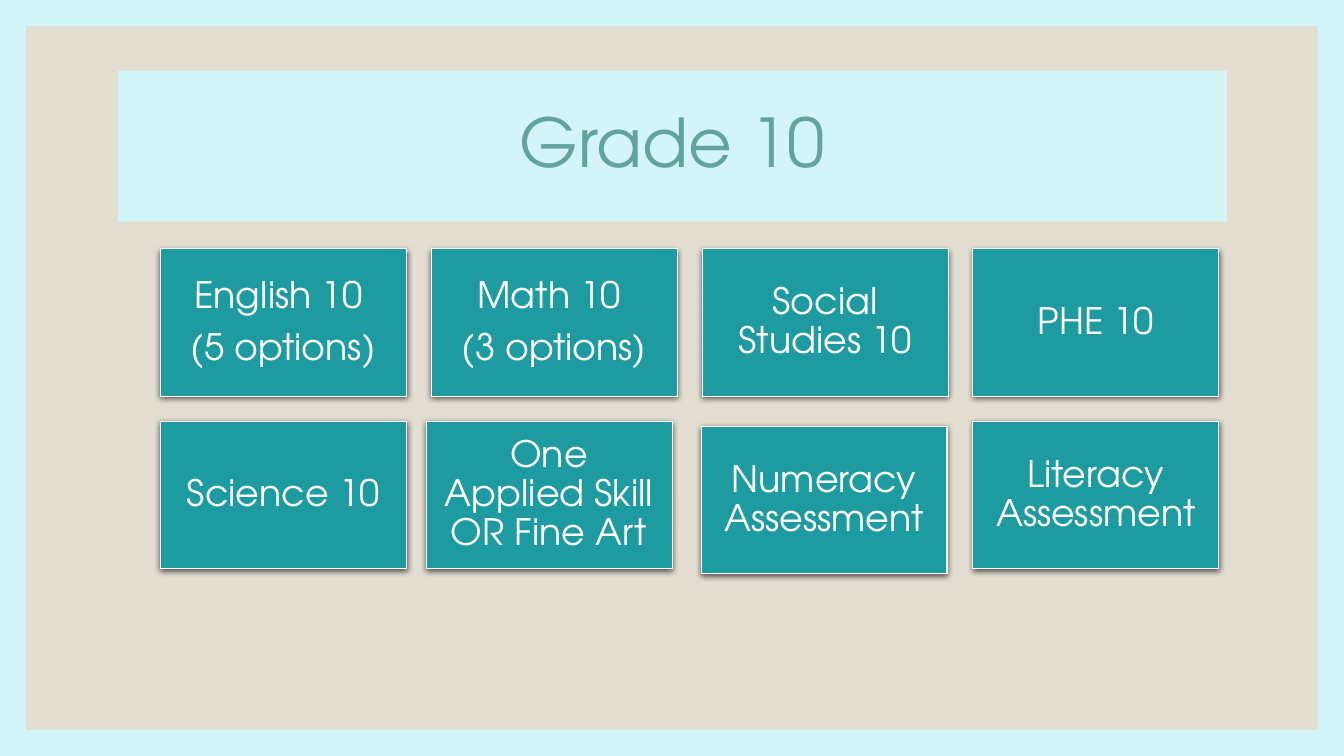
"""Build the Grade 10 course overview slide."""
from dataclasses import dataclass

from lxml import etree
from pptx import Presentation
from pptx import util as u
from pptx.dml.color import RGBColor
from pptx.enum import shapes, text
from pptx.oxml import ns

PALE = RGBColor(0xD4, 0xF5, 0xF7)
SAND = RGBColor(0xE3, 0xDE, 0xD1)
TEAL = RGBColor(0x1D, 0x9B, 0xA1)
SAGE = RGBColor(0x62, 0xA3, 0x9F)
WHITE = RGBColor(0xFF, 0xFF, 0xFF)
BLACK = RGBColor(0, 0, 0)
FONT = "TeX Gyre Adventor"

WIDTH, HEIGHT = 13.33, 7.5
BORDER = 0.26
GRID_LEFT, GRID_TOP = 1.59, 2.47
COLUMN, ROW = (9.65 - GRID_LEFT) / 3, 1.71
CARD_WIDTH, CARD_HEIGHT = 2.44, 1.46
CARD_INSET = u.Inches(0.11)
CARD_FRAME = dict.fromkeys(
    ("margin_left", "margin_top", "margin_right", "margin_bottom"), CARD_INSET
)


@dataclass(frozen=True)
class Course:
    lines: tuple[str, ...]
    column: int
    row: int
    shift_x: float = 0
    shift_y: float = 0


COURSES = (
    Course(("English 10 ", "(5 options)"), 0, 0),
    Course(("Math 10 ", "(3 options)"), 1, 0),
    Course(("Social Studies 10",), 2, 0),
    Course(("PHE 10",), 3, 0),
    Course(("Science 10",), 0, 1),
    Course(("Numeracy Assessment",), 2, 1, -0.01, 0.05),
    Course(("One Applied Skill OR Fine Art",), 1, 1, -0.05),
    Course(("Literacy Assessment",), 3, 1),
)


def apply(target, values: dict) -> None:
    for name, value in values.items():
        setattr(target, name, value)


def add_box(page, left: float, top: float, width: float, height: float, fill: RGBColor):
    box = page.shapes.add_shape(
        shapes.MSO_SHAPE.RECTANGLE, *map(u.Inches, (left, top, width, height))
    )
    box.shadow.inherit = False
    box.fill.solid()
    box.fill.fore_color.rgb = fill
    box.line.fill.background()
    return box


def write(box, lines: tuple[str, ...], size: int, color: RGBColor, after: float = 0) -> None:
    frame = box.text_frame
    apply(frame, {"word_wrap": True, "vertical_anchor": text.MSO_ANCHOR.MIDDLE})
    for index, line in enumerate(lines):
        para = frame.add_paragraph() if index else frame.paragraphs[0]
        apply(para, {
            "alignment": text.PP_ALIGN.CENTER,
            "line_spacing": 0.9,
            "space_after": u.Pt(after),
        })
        span = para.add_run()
        span.text = line
        apply(span.font, {"name": FONT, "size": u.Pt(size)})
        span.font.color.rgb = color


def add_shadow(box) -> None:
    effects = box.element.spPr.find(ns.qn("a:effectLst"))
    shadow = etree.SubElement(
        effects, ns.qn("a:outerShdw"), blurRad=str(u.Pt(4.5)), dist=str(u.Pt(1.5)),
        dir="5400000", algn="ctr", rotWithShape="0",
    )
    color = etree.SubElement(shadow, ns.qn("a:srgbClr"), val=str(BLACK))
    etree.SubElement(color, ns.qn("a:alpha"), val="63000")


def add_course(page, course: Course) -> None:
    left = GRID_LEFT + course.column * COLUMN + course.shift_x
    top = GRID_TOP + course.row * ROW + course.shift_y
    card = add_box(page, left, top, CARD_WIDTH, CARD_HEIGHT, TEAL)
    card.line.color.rgb = WHITE
    card.line.width = u.Pt(0.75)
    add_shadow(card)
    apply(card.text_frame, CARD_FRAME)
    write(card, course.lines, 26, WHITE, after=26 * 0.35)


def add_title(page) -> None:
    title = page.shapes.title
    apply(title, {
        "left": u.Inches(1.17), "top": u.Inches(0.7),
        "width": u.Inches(11), "height": u.Inches(1.5),
    })
    title.fill.solid()
    title.fill.fore_color.rgb = PALE
    title.text_frame.auto_size = text.MSO_AUTO_SIZE.NONE
    write(title, ("Grade 10",), 48, SAGE)


def main() -> None:
    deck = Presentation()
    apply(deck, {"slide_width": u.Inches(WIDTH), "slide_height": u.Inches(HEIGHT)})
    page = deck.slides.add_slide(deck.slide_layouts.get_by_name("Title Only"))
    page.background.fill.solid()
    page.background.fill.fore_color.rgb = PALE
    panel = add_box(page, BORDER, BORDER, WIDTH - 2 * BORDER, HEIGHT - 2 * BORDER, SAND)
    page.shapes.title.element.addprevious(panel.element)
    add_title(page)
    for course in COURSES:
        add_course(page, course)
    deck.save("out.pptx")


if __name__ == "__main__":
    main()
